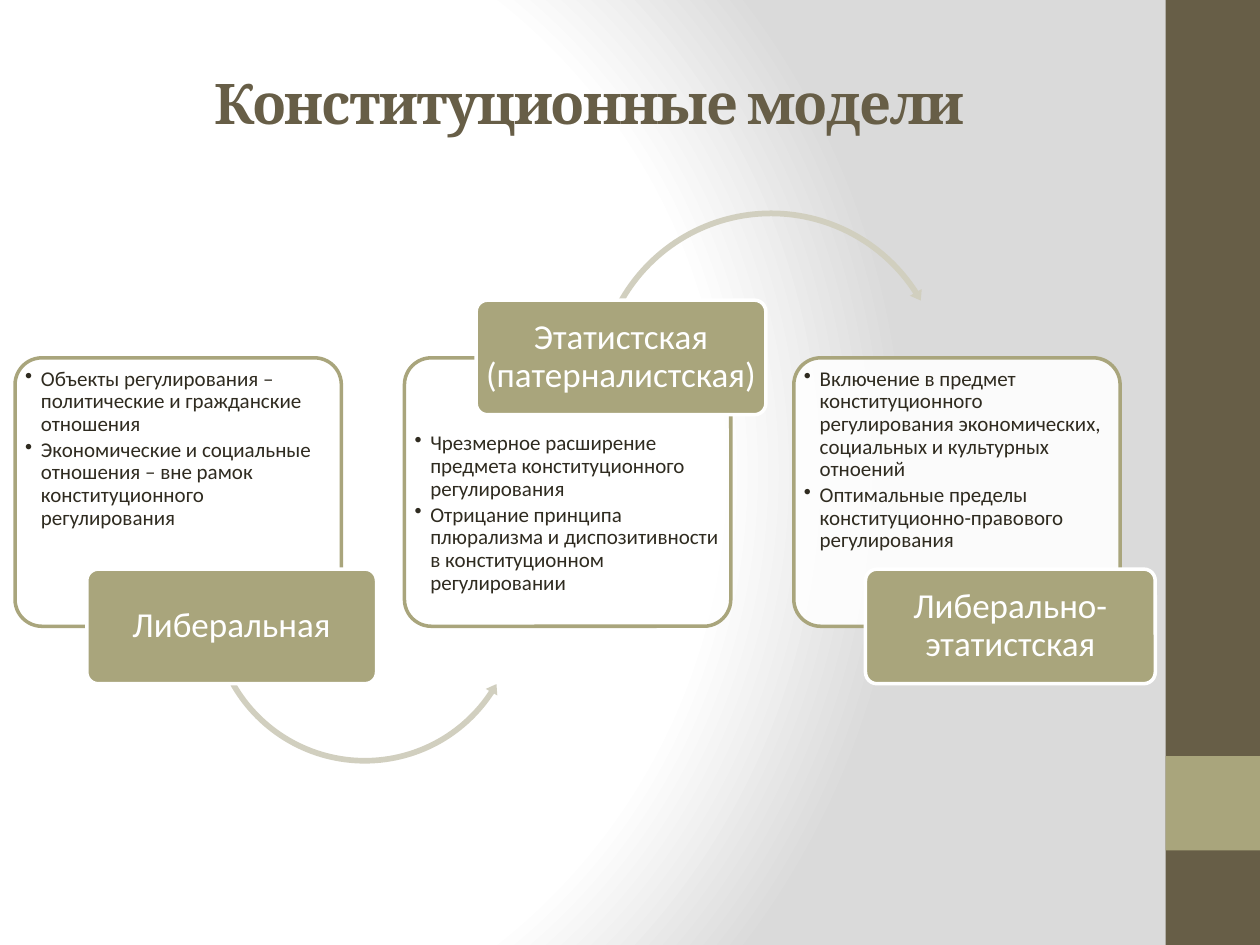
from typing import NamedTuple, Optional

from lxml.etree import SubElement
from pptx import Presentation
from pptx.dml.color import RGBColor
from pptx.enum.shapes import MSO_SHAPE as SHAPE
from pptx.enum.text import MSO_ANCHOR as ANCHOR, MSO_AUTO_SIZE as AUTO, PP_ALIGN as ALIGN
from pptx.oxml import parse_xml
from pptx.oxml.ns import nsdecls, qn
from pptx.util import Pt

COLORS = {
    "brown": "675E47",
    "olive": "A9A57C",
    "arrow": "D1CFBF",
    "white": "FFFFFF",
    "grey": "DADADA",
    "ink": "2F2B20",
}


class Box(NamedTuple):
    x: float
    y: float
    w: float
    h: float


class Arrow(NamedTuple):
    preset: SHAPE
    box: Box
    adjust: tuple


class Model(NamedTuple):
    name: str
    points: tuple
    label_on_top: bool = False
    arrow: Optional[Arrow] = None


CARD = Box(8.6, 204.5, 186.5, 153.4)
CARD_PITCH = 222.5
LABEL_DX, LABEL_W, LABEL_H = 41, 165.6, 65.5
LABEL_TOP_Y, LABEL_LOW_Y = 171.5, 325.2
CARD_INSET, LABEL_INSET = 1.3, 2.7
TOP_LABEL_SPACE = 33

MODELS = (
    Model(
        "Либеральная",
        ("Объекты регулирования – политические и гражданские отношения",
         "Экономические и социальные отношения – вне рамок конституционного регулирования"),
        arrow=Arrow(SHAPE.LEFT_CIRCULAR_ARROW, Box(118.1, 257.8, 180.7, 180.7),
                    (0.018, 2.153, 19.908, 90.245, 0.021)),
    ),
    Model(
        "Этатистская (патерналистская)",
        ("Чрезмерное расширение предмета конституционного регулирования",
         "Отрицание принципа плюрализма и диспозитивности в конституционном регулировании"),
        label_on_top=True,
        arrow=Arrow(SHAPE.CIRCULAR_ARROW, Box(338.4, 118.1, 204.5, 204.5),
                    (0.016, 1.893, 196.352, 125.755, 0.019)),
    ),
    Model(
        "Либерально-этатистская",
        ("Включение в предмет конституционного регулирования экономических, "
         "социальных и культурных отноений",
         "Оптимальные пределы конституционно-правового регулирования"),
    ),
)


def rgb(name: str) -> RGBColor:
    return RGBColor.from_string(COLORS[name])


def apply(target, values: dict) -> None:
    for key, value in values.items():
        setattr(target, key, value)


def add_shape(slide, preset, box: Box, fill: str, line: str = "", adjust: tuple = ()):
    sp = slide.shapes.add_shape(preset, *map(Pt, box))
    sp.shadow.inherit = False
    sp.fill.solid()
    sp.fill.fore_color.rgb = rgb(fill)
    if line:
        sp.line.color.rgb = rgb(line)
        sp.line.width = Pt(2)
    else:
        sp.line.fill.background()
    for i, value in enumerate(adjust):
        sp.adjustments[i] = value
    return sp


def set_frame(tf, anchor, inset: float, extra_top: float = 0) -> None:
    apply(tf, {
        "word_wrap": True,
        "auto_size": AUTO.NONE,
        "vertical_anchor": anchor,
        "margin_left": Pt(inset),
        "margin_right": Pt(inset),
        "margin_top": Pt(inset + extra_top),
        "margin_bottom": Pt(inset),
    })


def add_text(p, text: str, size: float, color: str, align, font="Calibri", bold=False):
    p.alignment = align
    r = p.add_run()
    r.text = text
    apply(r.font, {"name": font, "size": Pt(size), "bold": bold})
    r.font.color.rgb = rgb(color)
    return r


def add_bullet(p) -> None:
    pPr = p._p.get_or_add_pPr()
    pPr.set("marL", str(Pt(9)))
    pPr.set("indent", str(-Pt(9)))
    SubElement(pPr, qn("a:buChar")).set("char", "•")


def add_card(slide, box: Box, model: Model) -> None:
    sp = add_shape(slide, SHAPE.ROUNDED_RECTANGLE, box, "white", "olive", (0.1,))
    color = sp.fill._xPr.find(qn("a:solidFill"))[0]
    SubElement(color, qn("a:alpha")).set("val", "90000")
    tf = sp.text_frame
    set_frame(tf, ANCHOR.TOP, CARD_INSET, TOP_LABEL_SPACE + 4 if model.label_on_top else 0)
    for i, point in enumerate(model.points):
        p = tf.add_paragraph() if i else tf.paragraphs[0]
        apply(p, {"line_spacing": 0.9, "space_after": Pt(1.8)})
        add_text(p, point, 12, "ink", ALIGN.LEFT)
        add_bullet(p)


def add_label(slide, box: Box, name: str) -> None:
    sp = add_shape(slide, SHAPE.ROUNDED_RECTANGLE, box, "olive", "white", (0.1,))
    set_frame(sp.text_frame, ANCHOR.MIDDLE, LABEL_INSET)
    p = sp.text_frame.paragraphs[0]
    p.line_spacing = 0.9
    add_text(p, name, 20, "white", ALIGN.CENTER)


def add_model(slide, index: int, model: Model) -> None:
    card = CARD._replace(x=CARD.x + index * CARD_PITCH)
    add_card(slide, card, model)
    if model.arrow:
        add_shape(slide, model.arrow.preset, model.arrow.box, "arrow",
                  adjust=model.arrow.adjust)
    label_y = LABEL_TOP_Y if model.label_on_top else LABEL_LOW_Y
    add_label(slide, Box(card.x + LABEL_DX, label_y, LABEL_W, LABEL_H), model.name)


def set_background(slide) -> None:
    slide.background.fill.solid()
    stops = "".join(
        f'<a:gs pos="{pos}"><a:srgbClr val="{COLORS[name]}"/></a:gs>'
        for pos, name in ((0, "white"), (75000, "white"), (100000, "grey"))
    )
    bgPr = slide.element.find(".//" + qn("p:bgPr"))
    bgPr.replace(bgPr[0], parse_xml(
        f'<a:gradFill {nsdecls("a")} rotWithShape="1"><a:gsLst>{stops}</a:gsLst>'
        '<a:path path="circle"><a:fillToRect l="20000" t="50000" r="100000" b="50000"/>'
        '</a:path></a:gradFill>'
    ))


def set_title(slide, text: str) -> None:
    title = slide.shapes.title
    apply(title, dict(zip(("left", "top", "width", "height"),
                          map(Pt, (36.7, 26, 600, 64.8)))))
    tf = title.text_frame
    apply(tf, {"word_wrap": True, "auto_size": AUTO.NONE, "vertical_anchor": ANCHOR.MIDDLE})
    r = add_text(tf.paragraphs[0], text, 32, "brown", ALIGN.CENTER, "Cambria", True)
    r.font._element.set("spc", "-100")


def main() -> None:
    prs = Presentation()
    apply(prs, {"slide_width": Pt(720), "slide_height": Pt(540)})
    slide = prs.slides.add_slide(prs.slide_layouts[5])
    set_background(slide)
    add_shape(slide, SHAPE.RECTANGLE, Box(666, 0, 54, 540), "brown")
    add_shape(slide, SHAPE.RECTANGLE, Box(666, 432, 54, 54), "olive")
    set_title(slide, "Конституционные модели")
    for i, model in enumerate(MODELS):
        add_model(slide, i, model)
    prs.save("out.pptx")


if __name__ == "__main__":
    main()
